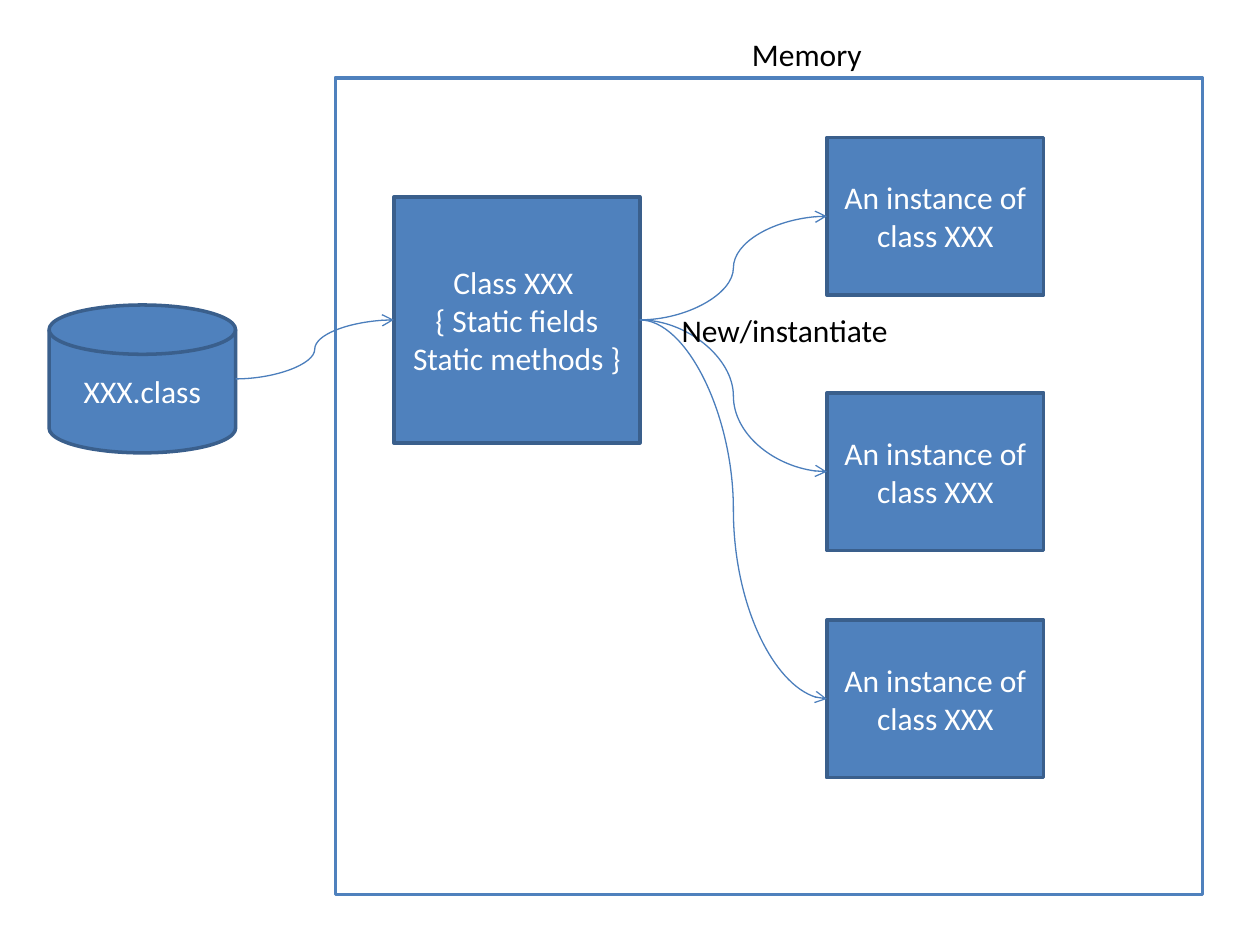
from lxml.etree import SubElement
from pptx import Presentation
from pptx.dml.color import RGBColor
from pptx.enum.shapes import MSO_CONNECTOR, MSO_SHAPE
from pptx.enum.text import MSO_ANCHOR, MSO_AUTO_SIZE, PP_ALIGN
from pptx.oxml.ns import qn
from pptx.util import Cm, Pt

COLORS = {
    "paper": "FFFFFF",
    "block": "4F81BD",
    "block_edge": "3A5F8C",
    "arrow": "4B7EBC",
    "label": "000000",
}
LEFT_SITE, RIGHT_SITE = 1, 3
INSTANCE_TOPS = (2.77, 7.92, 12.5)


def color(name):
    return RGBColor.from_string(COLORS[name])


def write_lines(frame, lines, ink, align):
    frame.text = "\n".join(lines)
    for paragraph in frame.paragraphs:
        paragraph.alignment = align
        paragraph.font.name = "Calibri"
        paragraph.font.size = Pt(18)
        paragraph.font.color.rgb = color(ink)


def add_block(slide, box, lines=(), kind=MSO_SHAPE.RECTANGLE,
              fill="block", edge="block_edge"):
    block = slide.shapes.add_shape(kind, *map(Cm, box))
    block.shadow.inherit = False
    block.fill.solid()
    block.fill.fore_color.rgb = color(fill)
    block.line.color.rgb = color(edge)
    block.line.width = Pt(2)
    if lines:
        block.text_frame.vertical_anchor = MSO_ANCHOR.MIDDLE
        write_lines(block.text_frame, lines, "paper", PP_ALIGN.CENTER)
    return block


def add_label(slide, box, wording):
    frame = slide.shapes.add_textbox(*map(Cm, box)).text_frame
    frame.word_wrap = False
    frame.auto_size = MSO_AUTO_SIZE.SHAPE_TO_FIT_TEXT
    write_lines(frame, [wording], "label", PP_ALIGN.LEFT)


def add_arrow(slide, source, target):
    """Curve from the right middle of source to the left middle of target."""
    arrow = slide.shapes.add_connector(
        MSO_CONNECTOR.CURVE,
        source.left + source.width, source.top + source.height // 2,
        target.left, target.top + target.height // 2)
    if source.auto_shape_type == MSO_SHAPE.RECTANGLE:
        arrow.begin_connect(source, RIGHT_SITE)
    arrow.end_connect(target, LEFT_SITE)
    arrow.line.color.rgb = color("arrow")
    arrow.line.width = Pt(0.75)
    SubElement(arrow.line._get_or_add_ln(), qn("a:tailEnd"), type="arrow")
    SubElement(arrow._element.spPr, qn("a:effectLst"))


def main():
    deck = Presentation()
    deck.slide_width, deck.slide_height = Cm(25.4), Cm(19.05)
    slide = deck.slides.add_slide(deck.slide_layouts[6])

    add_block(slide, (6.76, 1.57, 17.48, 16.46), fill="paper", edge="block")
    loaded_class = add_block(
        slide, (7.94, 3.97, 4.96, 4.96),
        ["Class XXX ", "{ Static fields", "Static methods }"])
    class_file = add_block(slide, (0.99, 6.15, 3.76, 2.98), ["XXX.class"],
                           MSO_SHAPE.FLOWCHART_MAGNETIC_DISK)
    add_arrow(slide, class_file, loaded_class)

    instances = [
        add_block(slide, (16.67, top, 4.37, 3.18), ["An instance of class XXX"])
        for top in INSTANCE_TOPS
    ]
    for instance in instances:
        add_arrow(slide, loaded_class, instance)

    add_label(slide, (13.49, 6.15, 4.72, 1.8), "New/instantiate")
    add_label(slide, (14.91, 0.58, 2.74, 1.02), "Memory")
    deck.save("out.pptx")


if __name__ == "__main__":
    main()
